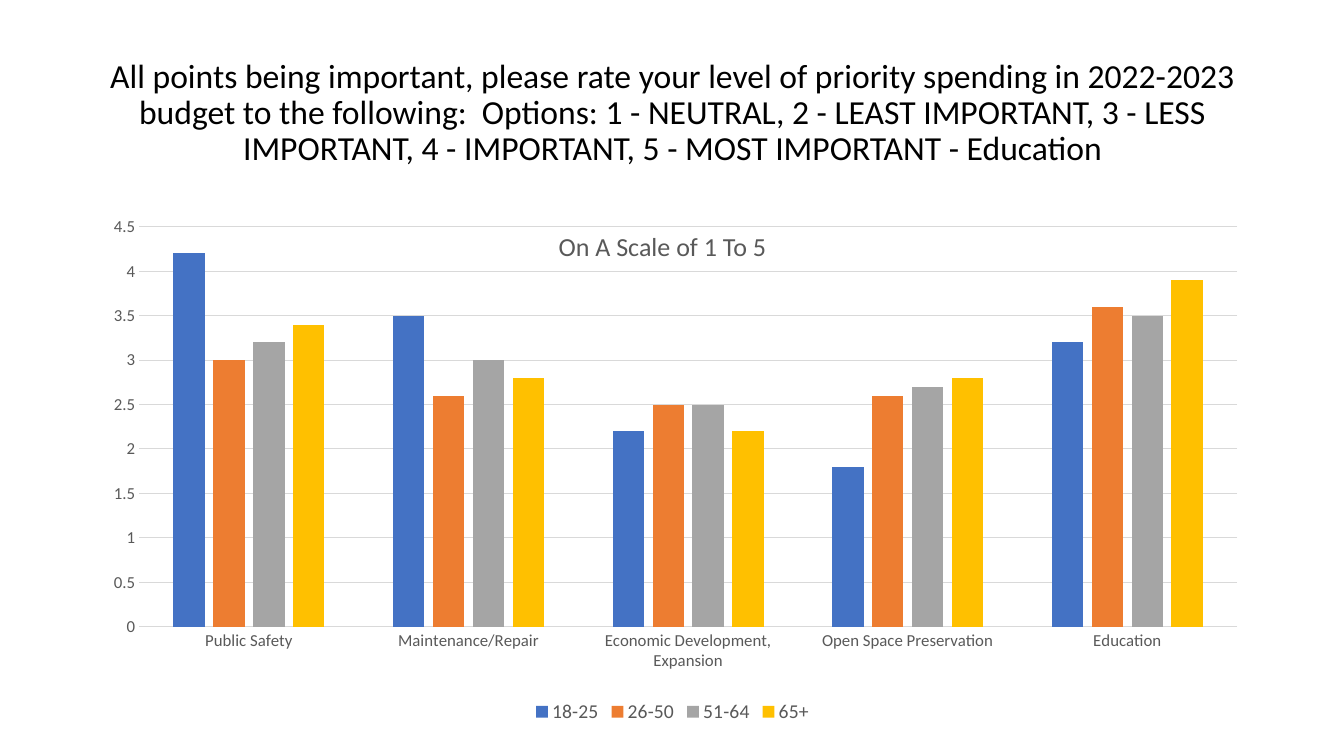
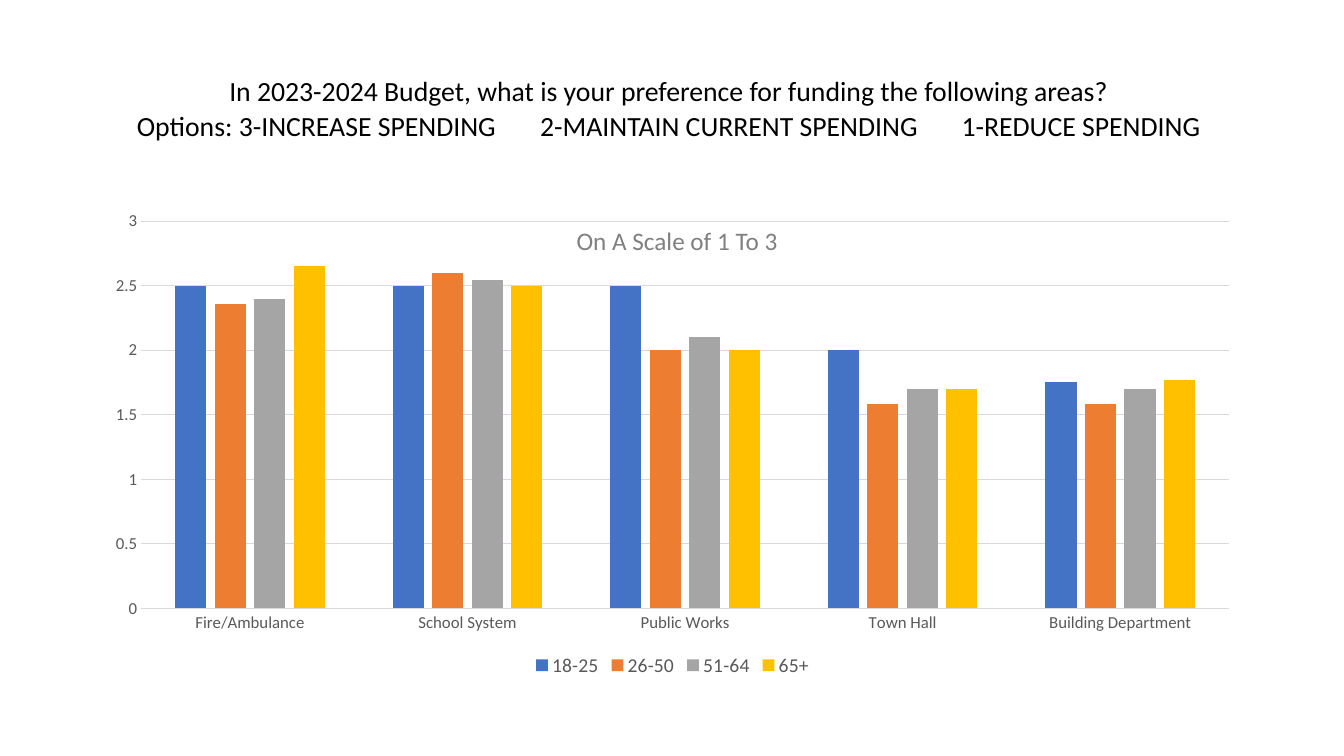
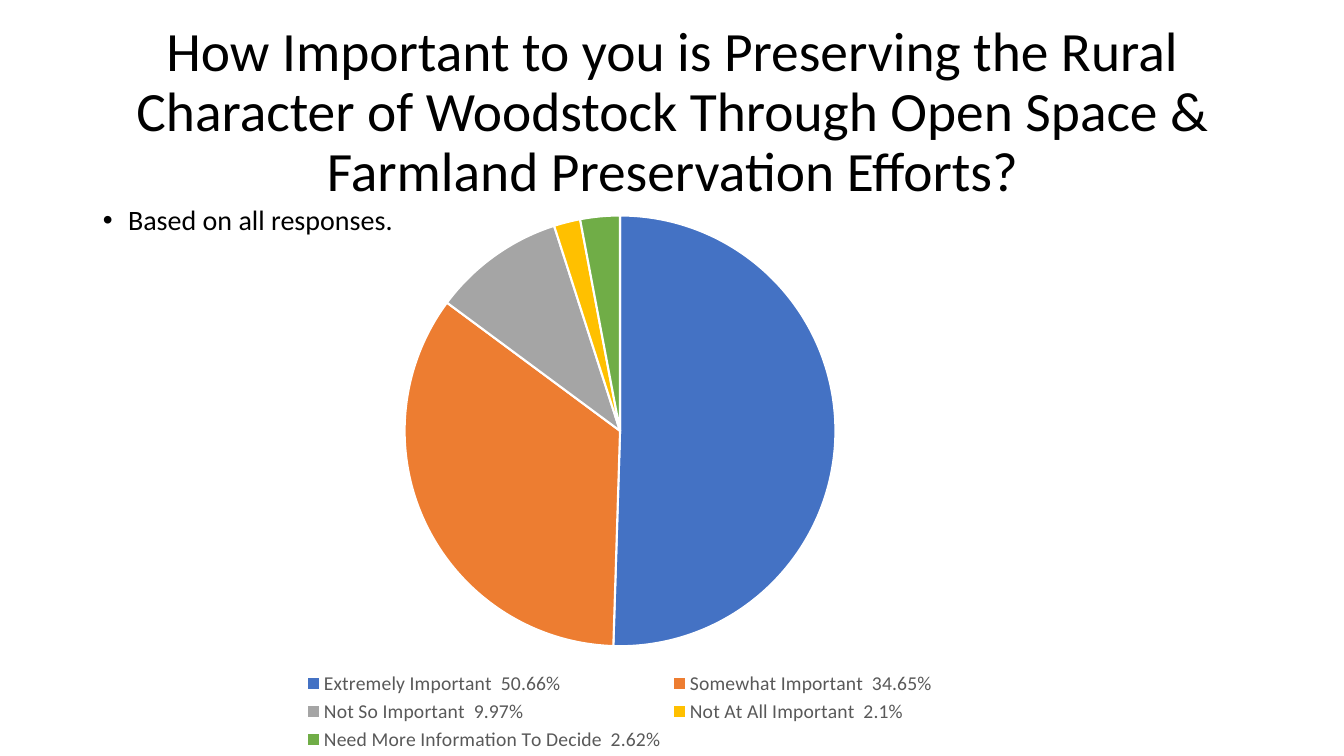
from dataclasses import dataclass

from lxml.etree import SubElement
from pptx import Presentation
from pptx.chart.data import CategoryChartData
from pptx.dml.color import RGBColor
from pptx.enum.chart import XL_CHART_TYPE, XL_LEGEND_POSITION, XL_TICK_MARK
from pptx.enum.text import MSO_ANCHOR, MSO_AUTO_SIZE, PP_ALIGN
from pptx.oxml import parse_xml
from pptx.oxml.ns import nsdecls, qn
from pptx.util import Inches, Pt


@dataclass(frozen=True)
class Theme:
    font: str = "Calibri"
    ink: str = "000000"
    label: str = "595959"
    faint_label: str = "808080"
    rule: str = "D9D9D9"
    paper: str = "FFFFFF"
    accents: tuple = ("4472C4", "ED7D31", "A5A5A5", "FFC000", "70AD47")
    priority_title_size: float = 24
    funding_title_size: float = 19.8
    preservation_title_size: float = 39.6
    priority_note_size: float = 18.6
    funding_note_size: float = 18
    chart_size: float = 10
    axis_size: float = 12
    legend_size: float = 14
    body_size: float = 20
    rule_width: float = 0.75
    slice_gap: float = 1.5


THEME = Theme()
LEFT, WIDTH = 0.92, 11.5
CONTENT_TOP, CONTENT_HEIGHT = 2, 4.76
TITLE_BOX = (LEFT, 0.4, WIDTH, 1.45)
TITLE_ONLY, TITLE_AND_BODY = 5, 1
AGE_GROUPS = ("18-25", "26-50", "51-64", "65+")


def place(shape, left, top, width, height):
    shape.left, shape.top = Inches(left), Inches(top)
    shape.width, shape.height = Inches(width), Inches(height)


def style_font(font, size, color):
    font.name = THEME.font
    font.size = Pt(size)
    font.color.rgb = RGBColor.from_string(color)


def add_span(para, text, size, color=THEME.ink):
    span = para.add_run()
    span.text = text
    style_font(span.font, size, color)


def add_page(deck, layout, title_lines, size, box=TITLE_BOX, line_spacing=0.9):
    """Add a slide with a centred title and return the slide."""
    page = deck.slides.add_slide(deck.slide_layouts[layout])
    place(page.shapes.title, *box)
    frame = page.shapes.title.text_frame
    frame.auto_size = MSO_AUTO_SIZE.NONE
    frame.vertical_anchor = MSO_ANCHOR.MIDDLE
    para = frame.paragraphs[0]
    para.alignment = PP_ALIGN.CENTER
    para.line_spacing = line_spacing
    for index, line in enumerate(title_lines):
        if index:
            para.add_line_break()
        add_span(para, line, size)
    return page


def set_tab_stops(para, positions):
    properties = para._p.get_or_add_pPr()
    tabs = SubElement(properties, qn("a:tabLst"))
    for position in positions:
        SubElement(tabs, qn("a:tab"), pos=str(Inches(position)), algn="l")


def fill_body(page, text):
    body = page.placeholders[1]
    place(body, LEFT, CONTENT_TOP, WIDTH, CONTENT_HEIGHT)
    body.text_frame.auto_size = MSO_AUTO_SIZE.NONE
    para = body.text_frame.paragraphs[0]
    para.line_spacing = 0.9
    para.space_before = Pt(10)
    properties = para._p.get_or_add_pPr()
    properties.set("marL", str(Inches(0.25)))
    properties.set("indent", str(-Inches(0.25)))
    add_span(para, text, THEME.body_size)


def add_scale_note(page, text, at, size, color, alignment):
    box = page.shapes.add_textbox(*map(Inches, at))
    box.text_frame.word_wrap = True
    para = box.text_frame.paragraphs[0]
    para.alignment = alignment
    add_span(para, text, size, color)


def add_chart(page, kind, at, categories, series):
    """Add a chart with the shared font and bottom legend."""
    data = CategoryChartData()
    data.categories = categories
    for name, values in series:
        data.add_series(name, values)
    chart = page.shapes.add_chart(kind, *map(Inches, at), data).chart
    chart.has_title = False
    style_font(chart.font, THEME.chart_size, THEME.ink)
    chart.has_legend = True
    chart.legend.position = XL_LEGEND_POSITION.BOTTOM
    chart.legend.include_in_layout = False
    style_font(chart.legend.font, THEME.legend_size, THEME.label)
    return chart


def paint(part, color):
    part.format.fill.solid()
    part.format.fill.fore_color.rgb = RGBColor.from_string(color)


def style_line(line, color, width):
    line.color.rgb = RGBColor.from_string(color)
    line.width = Pt(width)


def add_age_chart(page, height, categories, rows, maximum):
    """Add clustered columns with one series per age group."""
    chart = add_chart(page, XL_CHART_TYPE.COLUMN_CLUSTERED,
                      (LEFT, CONTENT_TOP, WIDTH, height),
                      categories, zip(AGE_GROUPS, rows))
    plot = chart.plots[0]
    plot.gap_width, plot.overlap = 219, -27
    plot.vary_by_categories = False
    for series, color in zip(plot.series, THEME.accents):
        paint(series, color)
    for axis in (chart.category_axis, chart.value_axis):
        axis.major_tick_mark = axis.minor_tick_mark = XL_TICK_MARK.NONE
        style_font(axis.tick_labels.font, THEME.axis_size, THEME.label)
    style_line(chart.category_axis.format.line, THEME.rule, THEME.rule_width)
    scale = chart.value_axis
    scale.minimum_scale, scale.maximum_scale, scale.major_unit = 0, maximum, 0.5
    scale.format.line.fill.background()
    scale.has_major_gridlines = True
    style_line(scale.major_gridlines.format.line, THEME.rule, THEME.rule_width)
    return chart


def set_inner_plot(chart, x, y, w, h):
    """Fix the plot area, in percent of the chart."""
    area = chart.element.find(f".//{qn('c:plotArea')}")
    for layout in area.findall(qn("c:layout")):
        area.remove(layout)
    sizes = "".join(f'<c:{tag} val="{percent / 100}"/>'
                    for tag, percent in zip("xywh", (x, y, w, h)))
    area.insert(0, parse_xml(
        f'<c:layout {nsdecls("c")}><c:manualLayout><c:layoutTarget val="inner"/>'
        f'<c:xMode val="edge"/><c:yMode val="edge"/>{sizes}'
        '</c:manualLayout></c:layout>'))


def add_priority_page(deck):
    page = add_page(deck, TITLE_ONLY, [
        "All points being important, please rate your level of priority spending "
        "in 2022-2023 budget to the following:  Options: 1 - NEUTRAL, "
        "2 - LEAST IMPORTANT, 3 - LESS IMPORTANT, 4 - IMPORTANT, "
        "5 - MOST IMPORTANT - Education"], THEME.priority_title_size)
    chart = add_age_chart(
        page, 5.22,
        ("Public Safety", "Maintenance/Repair", "Economic Development, Expansion",
         "Open Space Preservation", "Education"),
        ((4.2, 3.5, 2.2, 1.8, 3.2),
         (3, 2.6, 2.5, 2.6, 3.6),
         (3.2, 3, 2.5, 2.7, 3.5),
         (3.4, 2.8, 2.2, 2.8, 3.9)), 4.5)
    set_inner_plot(chart, 4, 4.8, 94.7, 76)
    add_scale_note(page, "On A Scale of 1 To 5", (5.18, 2.24, 2.78, 0.41),
                   THEME.priority_note_size, THEME.label, PP_ALIGN.CENTER)


def add_funding_page(deck):
    page = add_page(deck, TITLE_ONLY, [
        "In 2023-2024 Budget, what is your preference for funding the following areas?",
        "Options: 3-INCREASE SPENDING\t2-MAINTAIN CURRENT SPENDING\t1-REDUCE SPENDING",
    ], THEME.funding_title_size, (0.88, 0.42, WIDTH, 1.28), 1.07)
    set_tab_stops(page.shapes.title.text_frame.paragraphs[0], (4, 8.18))
    add_age_chart(
        page, CONTENT_HEIGHT,
        ("Fire/Ambulance", "School System", "Public Works", "Town Hall",
         "Building Department"),
        ((2.5, 2.5, 2.5, 2, 1.75),
         (2.36, 2.6, 2, 1.58, 1.58),
         (2.4, 2.54, 2.1, 1.7, 1.7),
         (2.65, 2.5, 2, 1.7, 1.77)), 3)
    add_scale_note(page, "On A Scale of 1 To 3", (5.62, 2.19, 2.31, 0.72),
                   THEME.funding_note_size, THEME.faint_label, PP_ALIGN.LEFT)


def add_preservation_page(deck):
    page = add_page(deck, TITLE_AND_BODY, [
        "How Important to you is Preserving the Rural Character of Woodstock "
        "Through Open Space & Farmland Preservation Efforts?"],
        THEME.preservation_title_size)
    fill_body(page, "Based on all responses.")
    shares = {"Extremely Important  50.66%": 51,
              "Somewhat Important  34.65%": 35,
              "Not So Important  9.97%": 10,
              "Not At All Important  2.1%": 2,
              "Need More Information To Decide  2.62%": 3}
    chart = add_chart(page, XL_CHART_TYPE.PIE, (1.06, CONTENT_TOP, 10.18, 5.5),
                      tuple(shares), [("Series 1", tuple(shares.values()))])
    plot = chart.plots[0]
    plot.vary_by_categories = True
    for index, color in enumerate(THEME.accents):
        point = plot.series[0].points[index]
        paint(point, color)
        style_line(point.format.line, THEME.paper, THEME.slice_gap)


def main():
    deck = Presentation()
    deck.slide_width, deck.slide_height = Inches(13.33), Inches(7.5)
    add_priority_page(deck)
    add_funding_page(deck)
    add_preservation_page(deck)
    deck.save("out.pptx")


if __name__ == "__main__":
    main()
